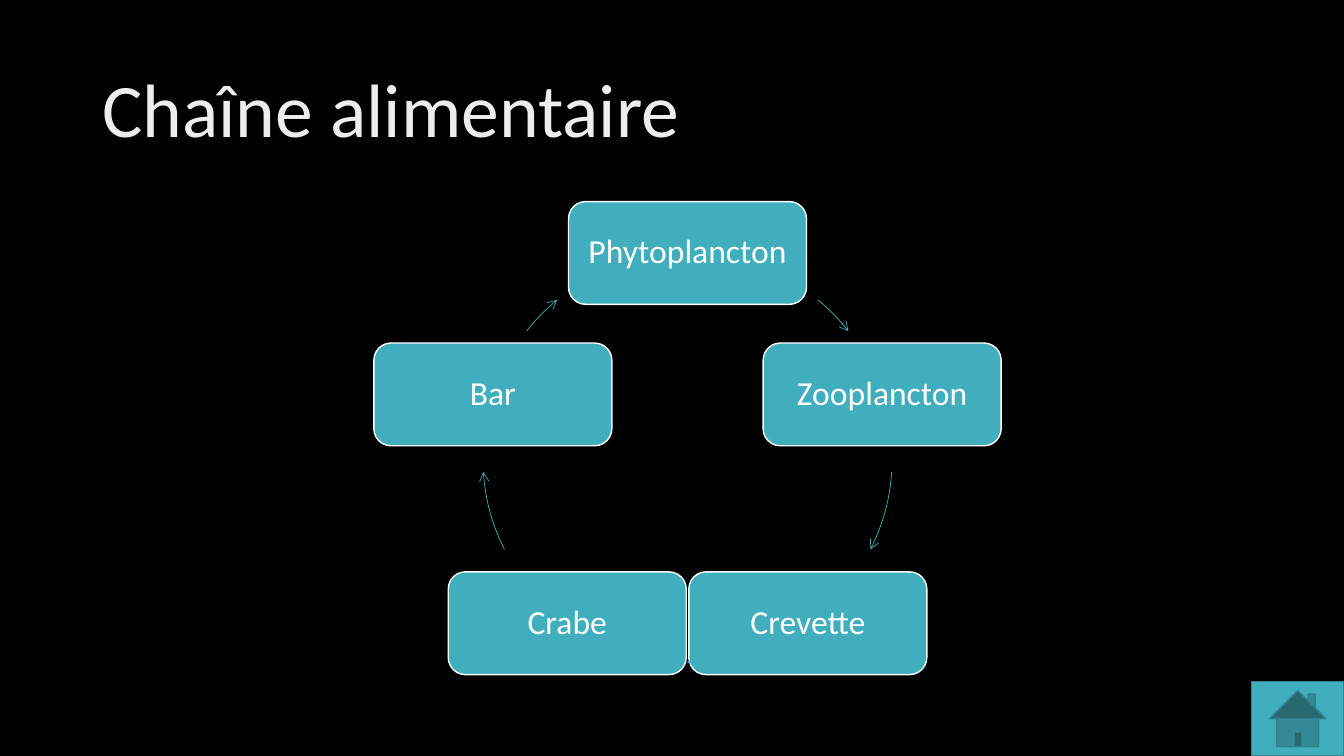
from math import cos, radians, sin

from lxml.etree import SubElement
from pptx import Presentation
from pptx.dml.color import RGBColor
from pptx.enum.shapes import MSO_SHAPE
from pptx.enum.text import MSO_ANCHOR, MSO_AUTO_SIZE, PP_ALIGN
from pptx.oxml.ns import qn
from pptx.util import Pt

COLORS = {
    "background": "000000",
    "title": "EDEDED",
    "teal": "41AEBD",
    "dark_teal": "30818C",
    "white": "FFFFFF",
}
FONT = "Calibri"
SLIDE_WIDTH, SLIDE_HEIGHT = 960, 540

# Food cycle: clockwise from the top, angles in degrees from the right
SPECIES = ["Phytoplancton", "Zooplancton", "Crevette", "Crabe", "Bar"]
ARROW_ANGLES = [(309.6, 321.8), (4, 26.6), (89.8, 90.2), (153.4, 176), (218.2, 230.4)]
CENTER_X, CENTER_Y, RADIUS = 491.1, 326.9, 146.2
NODE_WIDTH, NODE_HEIGHT = 170, 73.4


def color(name):
    return RGBColor.from_string(COLORS[name])


def write_text(shape, text, size, color_name, alignment):
    frame = shape.text_frame
    frame_format = {
        "word_wrap": True,
        "auto_size": MSO_AUTO_SIZE.NONE,
        "vertical_anchor": MSO_ANCHOR.MIDDLE,
    }
    for name, value in frame_format.items():
        setattr(frame, name, value)
    frame.text = text
    paragraph = frame.paragraphs[0]
    paragraph.alignment = alignment
    paragraph.line_spacing = 0.9
    font = paragraph.runs[0].font
    for name, value in {"name": FONT, "size": Pt(size)}.items():
        setattr(font, name, value)
    font.color.rgb = color(color_name)


def add_outlined_shape(slide, kind, left, top, width, height, line_name, line_width=1):
    shape = slide.shapes.add_shape(kind, Pt(left), Pt(top), Pt(width), Pt(height))
    shape.shadow.inherit = False
    shape.line.color.rgb = color(line_name)
    shape.line.width = Pt(line_width)
    return shape


def add_title(slide, text):
    title = slide.shapes.title
    position = {"left": 66, "top": 28.8, "width": 828, "height": 104.4}
    for name, value in position.items():
        setattr(title, name, Pt(value))
    write_text(title, text, 54, "title", PP_ALIGN.LEFT)


def add_home_button(slide):
    width, height = 66, 53.3
    button = add_outlined_shape(
        slide, MSO_SHAPE.ACTION_BUTTON_HOME, SLIDE_WIDTH - width,
        SLIDE_HEIGHT - height, width, height, "dark_teal")
    button.fill.solid()
    button.fill.fore_color.rgb = color("teal")


def add_species(slide, text, angle):
    left = CENTER_X + RADIUS * cos(radians(angle)) - NODE_WIDTH / 2
    top = CENTER_Y + RADIUS * sin(radians(angle)) - NODE_HEIGHT / 2
    node = add_outlined_shape(
        slide, MSO_SHAPE.ROUNDED_RECTANGLE, left, top, NODE_WIDTH, NODE_HEIGHT, "white")
    node.fill.solid()
    node.fill.fore_color.rgb = color("teal")
    for side in ("left", "top", "right", "bottom"):
        setattr(node.text_frame, f"margin_{side}", Pt(7.2))
    write_text(node, text, 24, "white", PP_ALIGN.CENTER)


def add_arc_arrow(slide, start, end):
    arc = add_outlined_shape(
        slide, MSO_SHAPE.ARC, CENTER_X - RADIUS, CENTER_Y - RADIUS,
        2 * RADIUS, 2 * RADIUS, "teal", 0.5)
    arc.fill.background()
    # Arc angles are stored in 60000ths of a degree, adjustments in 100000ths
    for index, angle in enumerate((start, end)):
        arc.adjustments[index] = angle * 0.6
    SubElement(arc.line._get_or_add_ln(), qn("a:tailEnd"), type="arrow")


def main():
    presentation = Presentation()
    presentation.slide_width = Pt(SLIDE_WIDTH)
    presentation.slide_height = Pt(SLIDE_HEIGHT)
    slide = presentation.slides.add_slide(presentation.slide_layouts[5])
    slide.background.fill.solid()
    slide.background.fill.fore_color.rgb = color("background")

    # Heading and navigation
    add_home_button(slide)
    add_title(slide, "Chaîne alimentaire")

    # Food cycle
    step = 360 / len(SPECIES)
    for index, (species, angles) in enumerate(zip(SPECIES, ARROW_ANGLES)):
        add_species(slide, species, index * step - 90)
        add_arc_arrow(slide, *angles)

    presentation.save("out.pptx")


if __name__ == "__main__":
    main()
